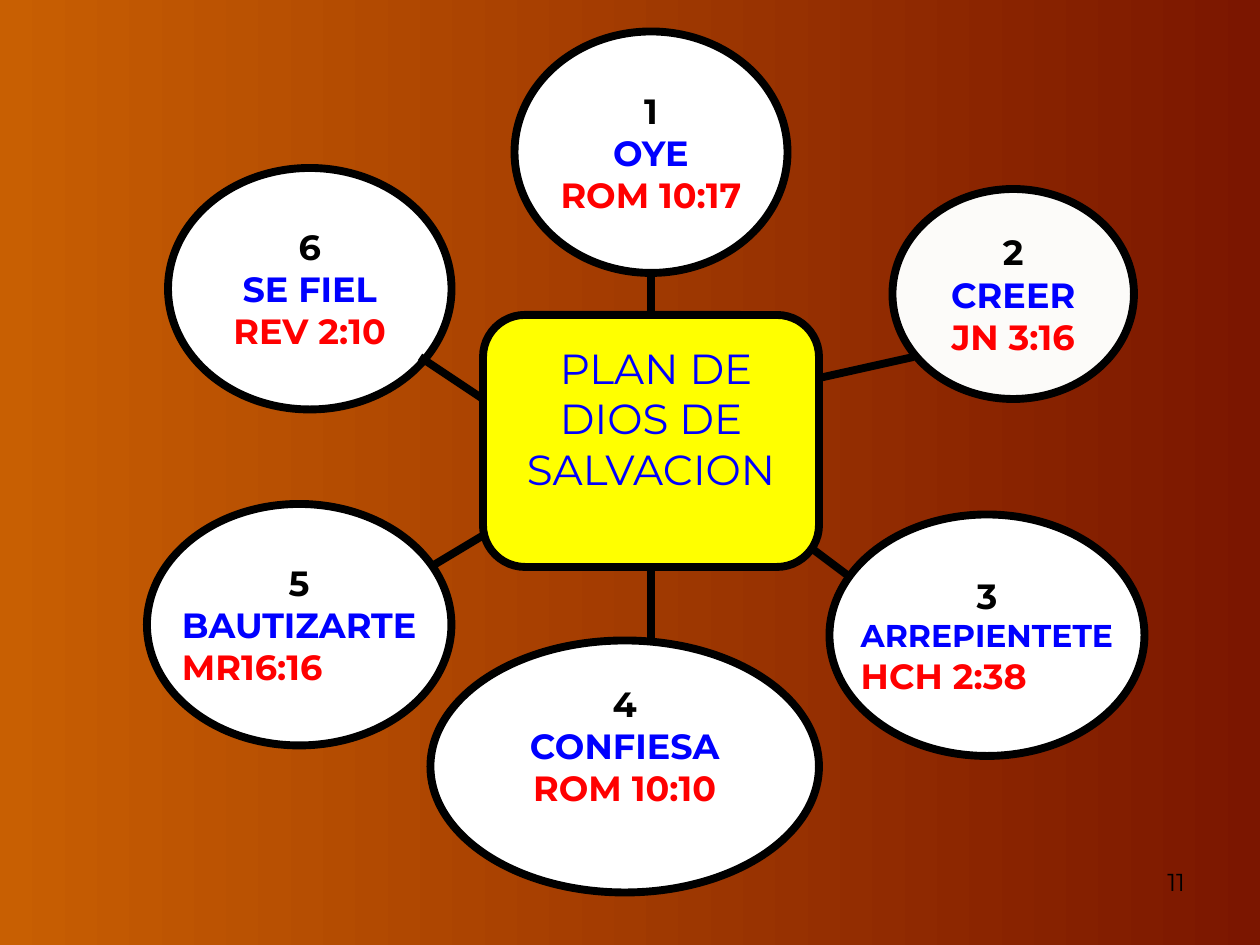
import pptx
import pptx.dml.color
import pptx.enum.shapes
import pptx.enum.text
import pptx.oxml.ns
import pptx.util
from lxml import etree

COLUMNS, ROWS = 120, 90
FONT = "Montserrat"
BLACK, BLUE, RED = "000000", "0000FF", "FF0000"
WHITE, IVORY, YELLOW = "FFFFFF", "FCFBF9", "FFFF00"
SHAPE = pptx.enum.shapes.MSO_SHAPE
ALIGN = pptx.enum.text.PP_ALIGN
ANCHOR = pptx.enum.text.MSO_ANCHOR
AUTO_SIZE = pptx.enum.text.MSO_AUTO_SIZE

STEPS = [
    ((49, 3, 26, 23), "OYE", "ROM 10:17", {}),
    ((85, 18, 23, 20), "CREER", "JN 3:16", {"fill": IVORY}),
    ((79, 49, 30, 23), "ARREPIENTETE", "HCH 2:38",
     {"verb_size": 18, "verse_align": ALIGN.LEFT}),
    ((41, 61, 37, 24), "CONFIESA", "ROM 10:10", {"bottom": 4}),
    ((14, 48, 29, 23), "BAUTIZARTE", "MR16:16", {"verse_align": ALIGN.LEFT}),
    ((16, 16, 27, 23), "SE FIEL", "REV 2:10", {}),
]
SPOKES = [
    ((78, 36), (87, 34)),
    ((77, 52), (81, 55)),
    ((46, 51), (41, 54)),
    ((46, 38), (40, 34)),
]


def color(value):
    """Turn a hex string into a colour."""
    return pptx.dml.color.RGBColor.from_string(value)


def grid(*cells):
    """Turn grid units of a twelfth of an inch into lengths."""
    return [pptx.util.Inches(cell / 12) for cell in cells]


def paint_background(page, start, end):
    """Fill the page with a gradient from left to right."""
    fill = page.background.fill
    fill.gradient()
    fill.gradient_angle = 0
    for stop, value in zip(fill.gradient_stops, (start, end)):
        stop.color.rgb = color(value)


def add_text(para, text, size=20, value=BLACK, bold=False, align=ALIGN.CENTER):
    """Write one formatted span into a paragraph."""
    para.alignment = align
    span = para.add_run()
    span.text = text
    span.font.name = FONT
    span.font.size = pptx.util.Pt(size)
    span.font.bold = bold
    span.font.color.rgb = color(value)


def outline(line):
    """Give a shape or connector the heavy black line."""
    line.color.rgb = color(BLACK)
    line.width = pptx.util.Pt(4.5)


def add_outlined(page, kind, place, fill):
    """Add a filled shape with the heavy outline."""
    shape = page.shapes.add_shape(kind, *grid(*place))
    shape.shadow.inherit = False
    shape.fill.solid()
    shape.fill.fore_color.rgb = color(fill)
    outline(shape.line)
    return shape


def add_step(page, number, place, verb, verse, fill=WHITE, verb_size=20,
             verse_align=ALIGN.CENTER, bottom=0):
    """Add an ellipse with its number, verb and verse."""
    frame = add_outlined(page, SHAPE.OVAL, place, fill).text_frame
    frame.margin_left = frame.margin_right = frame.margin_top = 0
    frame.margin_bottom = grid(bottom)[0]
    frame.word_wrap = False
    frame.vertical_anchor = ANCHOR.MIDDLE
    add_text(frame.paragraphs[0], str(number), bold=True)
    add_text(frame.add_paragraph(), verb, size=verb_size, value=BLUE, bold=True)
    add_text(frame.add_paragraph(), verse, value=RED, bold=True, align=verse_align)


def add_spoke(page, start, end):
    """Add a straight connector between two grid points."""
    spoke = page.shapes.add_connector(
        pptx.enum.shapes.MSO_CONNECTOR.STRAIGHT, *grid(*start, *end))
    outline(spoke.line)
    etree.SubElement(spoke._element.spPr, pptx.oxml.ns.qn("a:effectLst"))
    return spoke


def place_title(page, place, text):
    """Move the title over the centre box and format it."""
    title = page.shapes.title
    title.left, title.top, title.width, title.height = grid(*place)
    page.shapes._spTree.append(title._element)
    frame = title.text_frame
    frame.word_wrap = True
    frame.auto_size = AUTO_SIZE.NONE
    frame.vertical_anchor = ANCHOR.TOP
    para = frame.paragraphs[0]
    add_text(para, text, size=24, value=BLUE)
    para._p.get_or_add_pPr().set("indent", str(pptx.util.Inches(0.08)))


def add_page_number(page, place, text):
    """Add the page number in the corner."""
    frame = page.shapes.add_textbox(*grid(*place)).text_frame
    frame.word_wrap = True
    add_text(frame.paragraphs[0], text, size=14, align=ALIGN.LEFT)


def main():
    """Build the slide and save it."""
    deck = pptx.Presentation()
    deck.slide_width, deck.slide_height = grid(COLUMNS, ROWS)
    page = deck.slides.add_slide(deck.slide_layouts.get_by_name("Title Only"))
    paint_background(page, "C85F02", "7B1600")
    for number, (place, verb, verse, options) in enumerate(STEPS, start=1):
        add_step(page, number, place, verb, verse, **options)
    for start, end in SPOKES:
        add_spoke(page, start, end)
    center = add_outlined(page, SHAPE.ROUNDED_RECTANGLE, (46, 30, 32, 24), YELLOW)
    add_spoke(page, (62, 26), (62, 30)).end_connect(center, 0)
    add_spoke(page, (62, 54), (62, 61)).begin_connect(center, 2)
    place_title(page, (46, 32, 32, 16), "PLAN DE DIOS DE SALVACION")
    add_page_number(page, (110, 82, 7, 4), "11")
    deck.save("out.pptx")


if __name__ == "__main__":
    main()
